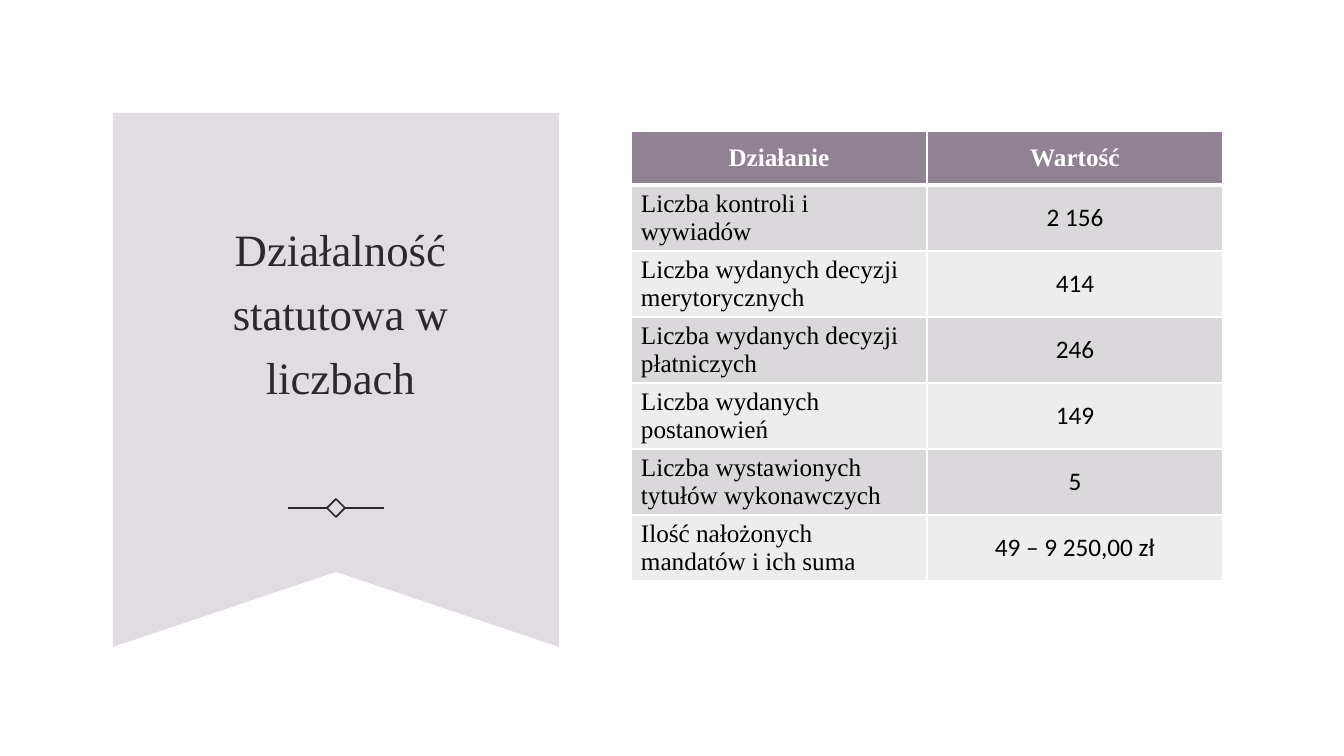
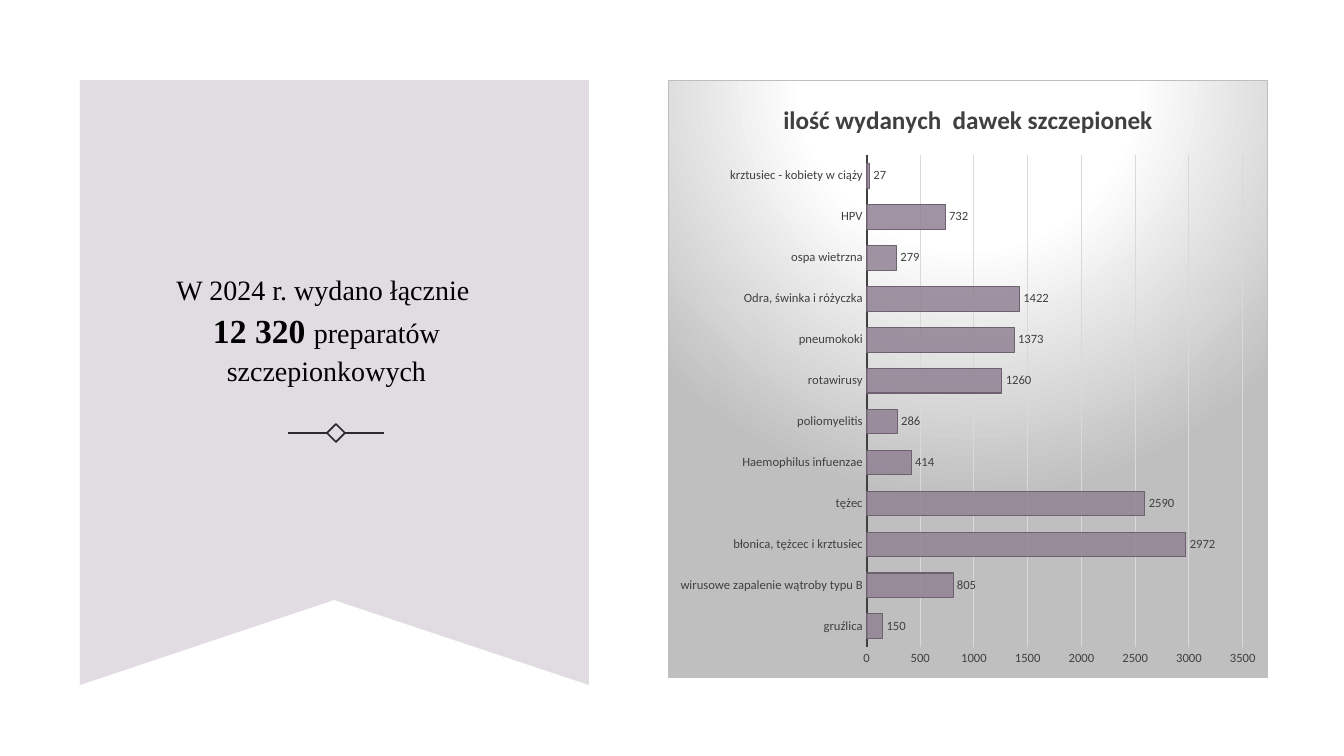
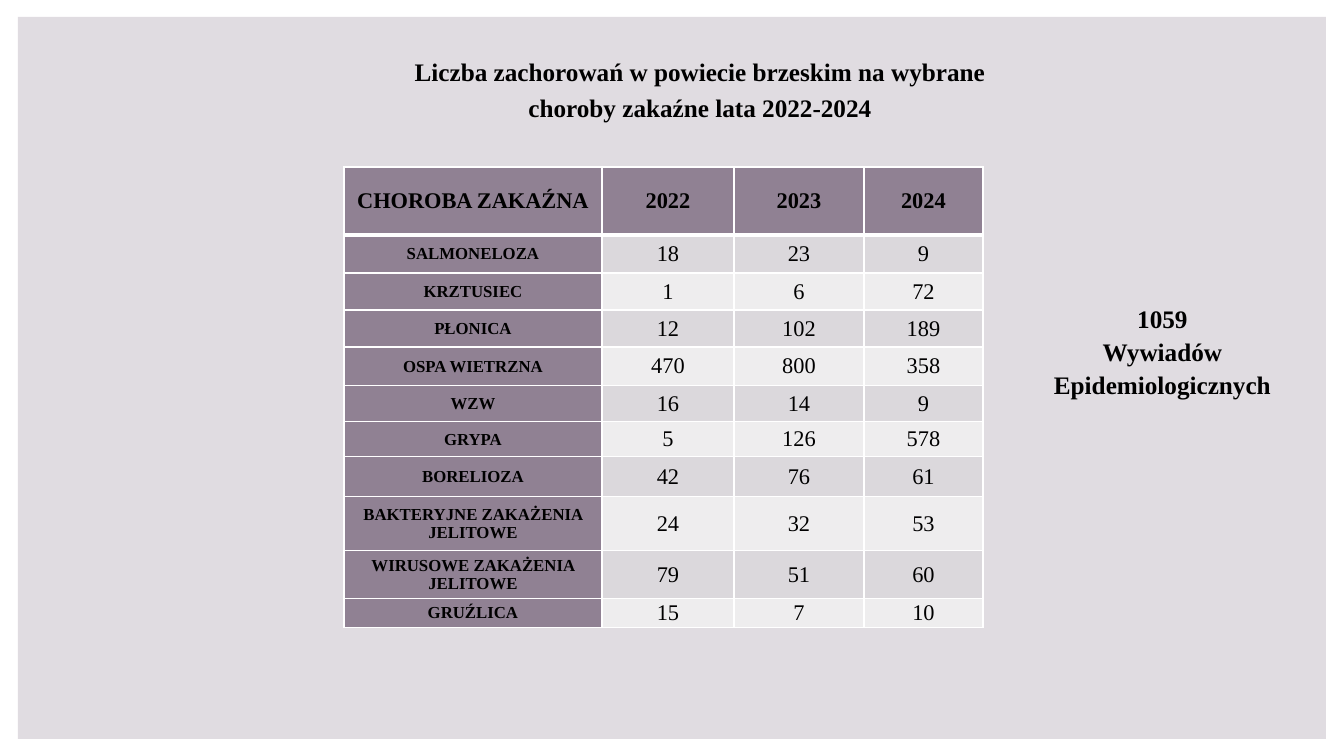
from dataclasses import dataclass

from lxml import etree
from pptx import Presentation
from pptx import util as u
from pptx.chart.data import CategoryChartData
from pptx.dml.color import RGBColor
from pptx.enum import chart as ch
from pptx.enum import shapes, text
from pptx.oxml import parse_xml
from pptx.oxml.ns import qn

PX = 12192000 / 1344
A_NS = 'xmlns:a="http://schemas.openxmlformats.org/drawingml/2006/main"'
C_NS = 'xmlns:c="http://schemas.openxmlformats.org/drawingml/2006/chart"'
CENTER, LEFT = text.PP_ALIGN.CENTER, text.PP_ALIGN.LEFT
TOP, MIDDLE, BOTTOM = text.MSO_ANCHOR.TOP, text.MSO_ANCHOR.MIDDLE, text.MSO_ANCHOR.BOTTOM


@dataclass(frozen=True)
class Theme:
    serif: str = "Times New Roman"
    sans: str = "Calibri"
    white: str = "FFFFFF"
    black: str = "000000"
    ink: str = "2C2830"
    panel: str = "E0DCE1"
    accent: str = "908193"
    accent_edge: str = "6D606F"
    bands: tuple = ("EEEDEE", "DBD8DC")
    chart_text: str = "404040"
    chart_edge: str = "BFBFBF"
    grid: str = "D9D9D9"
    title: int = 32
    figure: int = 24
    statement: int = 20
    body: int = 18
    cell: int = 16
    small: int = 12
    label: int = 9
    title_spacing: float = 1.19
    text_spacing: float = 1.1


@dataclass(frozen=True)
class CellLook:
    fill: str
    size: int
    color: str = "000000"
    bold: bool = False
    font: str = "Times New Roman"
    align: object = CENTER
    anchor: object = MIDDLE


THEME = Theme()


def px(length):
    return u.Emu(round(length * PX))


def rgb(color):
    return RGBColor.from_string(color)


def set_font(font, size, color, bold=False, name=THEME.serif):
    font.size, font.bold, font.name = u.Pt(size), bold, name
    font.color.rgb = rgb(color)


def set_line(line, color, width):
    line.color.rgb = rgb(color)
    line.width = u.Pt(width)


class Deck:
    def __init__(self, theme):
        self.theme = theme
        self.prs = Presentation()
        self.prs.slide_width, self.prs.slide_height = px(1344), px(756)
        self.slide = None

    def new_slide(self, titled=True):
        self.slide = self.prs.slides.add_slide(self.prs.slide_layouts[5 if titled else 6])

    def title(self, at, words, size, color, bold=False, anchor=MIDDLE, bottom_inset=5):
        heading = self.slide.shapes.title
        self.slide.shapes._spTree.append(heading._element)
        heading.left, heading.top, heading.width, heading.height = map(px, at)
        frame = heading.text_frame
        frame.text = words
        frame.word_wrap, frame.auto_size = True, text.MSO_AUTO_SIZE.NONE
        frame.vertical_anchor, frame.margin_bottom = anchor, px(bottom_inset)
        paragraph = frame.paragraphs[0]
        paragraph.alignment, paragraph.line_spacing = CENTER, self.theme.title_spacing
        set_font(paragraph.runs[0].font, size, color, bold)

    def paint(self, shape, fill):
        shape.shadow.inherit = False
        shape.fill.solid()
        shape.fill.fore_color.rgb = rgb(fill)
        shape.line.fill.background()

    def panel(self, *at):
        self.paint(self.slide.shapes.add_shape(shapes.MSO_SHAPE.RECTANGLE, *map(px, at)), self.theme.panel)

    def banner(self, left, top, width, height):
        right, bottom = left + width, top + height
        notch = (left + width / 2, top + height * 0.86)
        outline = self.slide.shapes.build_freeform(left, top, scale=PX)
        outline.add_line_segments([(right, top), (right, bottom), notch, (left, bottom)], close=True)
        self.paint(outline.convert_to_shape(), self.theme.panel)

    def divider(self, center_x, center_y, reach=48, half=9):
        diamond = self.slide.shapes.add_shape(
            shapes.MSO_SHAPE.DIAMOND, px(center_x - half), px(center_y - half), px(2 * half), px(2 * half))
        diamond.shadow.inherit = False
        diamond.fill.background()
        set_line(diamond.line, self.theme.ink, 1.25)
        for side, site in ((-1, 1), (1, 3)):
            arm = self.slide.shapes.add_connector(
                shapes.MSO_CONNECTOR.STRAIGHT, px(center_x + side * reach), px(center_y),
                px(center_x + side * half), px(center_y))
            arm.end_connect(diamond, site)
            set_line(arm.line, self.theme.ink, 1.25)
            etree.SubElement(arm._element.spPr, qn("a:effectLst"))

    def text_box(self, at, paragraphs):
        frame = self.slide.shapes.add_textbox(*map(px, at)).text_frame
        frame.word_wrap = True
        for index, pieces in enumerate(paragraphs):
            paragraph = frame.add_paragraph() if index else frame.paragraphs[0]
            paragraph.alignment, paragraph.line_spacing = CENTER, self.theme.text_spacing
            for words, size, bold in pieces:
                run = paragraph.add_run()
                run.text = words.rstrip("\v")
                set_font(run.font, size, self.theme.black, bold)
                if words.endswith("\v"):
                    paragraph.add_line_break()

    def cell_borders(self, cell, header):
        props = cell._tc.get_or_add_tcPr()
        for index, side in enumerate("LRTB"):
            width = u.Pt(3 if header and side == "B" else 1)
            props.insert(index, parse_xml(
                f'<a:ln{side} {A_NS} w="{width}"><a:solidFill><a:srgbClr val="{self.theme.white}"/>'
                f'</a:solidFill></a:ln{side}>'))

    def table(self, left, top, widths, heights, rows, look, insets=(10, 5)):
        grid = self.slide.shapes.add_table(
            len(rows), len(widths), px(left), px(top), px(sum(widths)), px(sum(heights))).table
        for column, width in zip(grid.columns, widths):
            column.width = px(width)
        for r, (row, height) in enumerate(zip(rows, heights)):
            grid.rows[r].height = px(height)
            for c, words in enumerate(row):
                cell, style = grid.cell(r, c), look(r, c)
                cell.text = words
                cell.margin_left = cell.margin_right = px(insets[0])
                cell.margin_top = cell.margin_bottom = px(insets[1])
                cell.vertical_anchor = style.anchor
                cell.fill.solid()
                cell.fill.fore_color.rgb = rgb(style.fill)
                self.cell_borders(cell, header=r == 0)
                paragraph = cell.text_frame.paragraphs[0]
                paragraph.alignment = style.align
                set_font(paragraph.runs[0].font, style.size, style.color, style.bold, style.font)

    def bar_chart(self, at, name, values):
        theme = self.theme
        data = CategoryChartData()
        data.categories = list(values)
        data.add_series(name, list(values.values()))
        chart = self.slide.shapes.add_chart(ch.XL_CHART_TYPE.BAR_CLUSTERED, *map(px, at), data).chart
        set_font(chart.font, 10, theme.black, name=theme.sans)
        chart.has_legend = False
        chart.has_title = True
        chart.chart_title.include_in_layout = False
        chart.chart_title.text_frame.text = name
        title_run = chart.chart_title.text_frame.paragraphs[0].runs[0]
        set_font(title_run.font, theme.body, theme.chart_text, True, theme.sans)

        for axis in (chart.category_axis, chart.value_axis):
            axis.major_tick_mark = axis.minor_tick_mark = ch.XL_TICK_MARK.NONE
            set_font(axis.tick_labels.font, theme.label, theme.chart_text, name=theme.sans)
        set_line(chart.category_axis.format.line, theme.chart_text, 1.5)
        scale = chart.value_axis
        scale.minimum_scale, scale.maximum_scale, scale.major_unit = 0, 3500, 500
        scale.format.line.fill.background()
        set_line(scale.major_gridlines.format.line, theme.grid, 0.75)

        plot = chart.plots[0]
        plot.gap_width, plot.vary_by_categories = 65, False
        bars = plot.series[0]
        bars.format.fill.solid()
        bars.format.fill.fore_color.rgb = rgb(theme.accent)
        bar_color = bars._element.spPr.find(".//" + qn("a:srgbClr"))
        etree.SubElement(bar_color, qn("a:alpha")).set("val", "85000")
        set_line(bars.format.line, theme.accent_edge, 0.75)
        labels = bars.data_labels
        labels.show_value, labels.position = True, ch.XL_LABEL_POSITION.OUTSIDE_END
        set_font(labels.font, theme.label, theme.chart_text, name=theme.sans)
        self.chart_background(chart)

    def chart_background(self, chart):
        white, edge = self.theme.white, self.theme.chart_edge
        stops = "".join(
            f'<a:gs pos="{share * 1000}"><a:srgbClr val="{color}"/></a:gs>'
            for share, color in ((0, white), (39, white), (100, edge)))
        chart._chartSpace.find(qn("c:chart")).addnext(parse_xml(
            f'<c:spPr {C_NS} {A_NS}><a:gradFill><a:gsLst>{stops}</a:gsLst><a:path path="circle">'
            '<a:fillToRect l="50000" t="-80000" r="50000" b="180000"/></a:path></a:gradFill>'
            f'<a:ln w="{u.Pt(0.75)}"><a:solidFill><a:srgbClr val="{edge}"/></a:solidFill></a:ln></c:spPr>'))


ACTIVITIES = [
    ("Działanie", "Wartość"),
    ("Liczba kontroli i wywiadów", "2 156"),
    ("Liczba wydanych decyzji merytorycznych", "414"),
    ("Liczba wydanych decyzji płatniczych", "246"),
    ("Liczba wydanych postanowień", "149"),
    ("Liczba wystawionych tytułów wykonawczych", "5"),
    ("Ilość nałożonych mandatów i ich suma", "49 – 9 250,00 zł"),
]
DOSES = {
    "gruźlica": 150,
    "wirusowe zapalenie wątroby typu B": 805,
    "błonica, tężcec i krztusiec": 2972,
    "tężec": 2590,
    "Haemophilus infuenzae": 414,
    "poliomyelitis": 286,
    "rotawirusy": 1260,
    "pneumokoki": 1373,
    "Odra, świnka i różyczka": 1422,
    "ospa wietrzna": 279,
    "HPV": 732,
    "krztusiec - kobiety w ciąży": 27,
}
DISEASES = [
    ("CHOROBA ZAKAŹNA", "2022", "2023", "2024"),
    ("SALMONELOZA", "18", "23", "9"),
    ("KRZTUSIEC", "1", "6", "72"),
    ("PŁONICA", "12", "102", "189"),
    ("OSPA WIETRZNA", "470", "800", "358"),
    ("WZW", "16", "14", "9"),
    ("GRYPA", "5", "126", "578"),
    ("BORELIOZA", "42", "76", "61"),
    ("BAKTERYJNE ZAKAŻENIA JELITOWE", "24", "32", "53"),
    ("WIRUSOWE ZAKAŻENIA JELITOWE", "79", "51", "60"),
    ("GRUŹLICA", "15", "7", "10"),
]


def activity_look(row, column):
    if row == 0:
        return CellLook(THEME.accent, THEME.body, THEME.white, bold=True)
    band = THEME.bands[row % 2]
    if column == 0:
        return CellLook(band, THEME.body, align=LEFT, anchor=TOP)
    return CellLook(band, THEME.body, font=THEME.sans)


def disease_look(row, column):
    if row == 0:
        return CellLook(THEME.accent, THEME.cell, bold=True)
    if column == 0:
        return CellLook(THEME.accent, THEME.small, bold=True)
    return CellLook(THEME.bands[row % 2], THEME.cell)


def activity_slide(deck):
    deck.new_slide()
    deck.banner(113, 113, 446, 534)
    deck.divider(336, 508)
    deck.title((155, 149, 371, 371), "Działalność statutowa w liczbach", THEME.title, THEME.ink, bottom_inset=59)
    deck.table(631, 131, [296] * 2, [54] + [66] * 6, ACTIVITIES, activity_look)


def vaccine_slide(deck):
    deck.new_slide(titled=False)
    deck.banner(80, 80, 509, 605)
    deck.divider(336, 433)
    deck.bar_chart((668, 80, 600, 598), "ilość wydanych  dawek szczepionek", DOSES)
    deck.text_box((133, 264, 387, 119), [[
        ("W 2024 r. wydano łącznie \v", THEME.statement, False),
        ("12 320 ", THEME.figure, True),
        ("preparatów szczepionkowych", THEME.statement, False),
    ]])


def disease_slide(deck):
    deck.new_slide()
    deck.panel(18, 17, 1308, 722)
    deck.title((371, 56, 658, 72), "Liczba zachorowań w powiecie brzeskim na wybrane choroby zakaźne lata 2022-2024",
               THEME.body, THEME.black, bold=True, anchor=BOTTOM)
    deck.table(344, 167, [258, 132, 130, 119], [68, 38, 37, 37, 39, 36, 35, 40, 54, 48, 29],
               DISEASES, disease_look, insets=(5, 0))
    deck.text_box((1040, 295, 245, 102), [
        [(words, THEME.body, True)] for words in ("1059", "Wywiadów Epidemiologicznych")])


def main():
    deck = Deck(THEME)
    for build in (activity_slide, vaccine_slide, disease_slide):
        build(deck)
    deck.prs.save("out.pptx")


if __name__ == "__main__":
    main()
